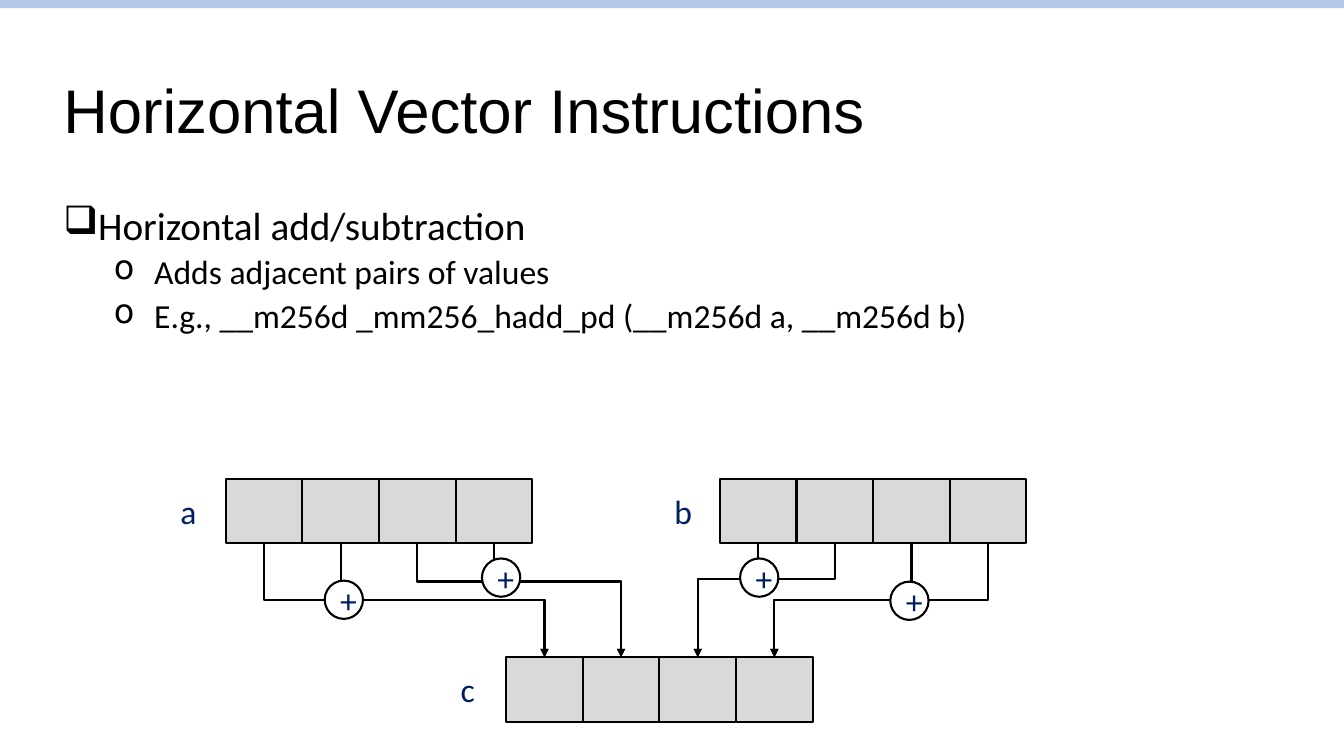
import lxml.etree
import pptx
import pptx.dml.color
import pptx.enum.shapes
import pptx.enum.text
import pptx.oxml.ns
import pptx.util

Inches = pptx.util.Inches
Pt = pptx.util.Pt
qn = pptx.oxml.ns.qn
SHAPES = pptx.enum.shapes.MSO_SHAPE
ANCHOR = pptx.enum.text.MSO_ANCHOR
ALIGN = pptx.enum.text.PP_ALIGN

BLACK, NAVY, WHITE = "000000", "002060", "FFFFFF"
GRAY, PALE_BLUE = "D9D9D9", "B4C7E7"
CELL_WIDTH, CELL_HEIGHT, CELL_COUNT = 0.76, 0.64, 4
INPUT_TOP, RESULT_TOP = 4.75, 6.52
CIRCLE_SIZE = 0.38
VECTOR_LEFT = {"a": 2.24, "b": 7.14, "c": 5.02}

BULLETS = [
    ("Horizontal add/subtraction", 0),
    ("Adds adjacent pairs of values", 1),
    ("E.g., __m256d _mm256_hadd_pd (__m256d a, __m256d b)", 1),
]
# Bullet character, left margin, indent, font size, space before
BULLET_LEVELS = [("❑", 0.25, -0.5, 28, 10), ("o", 0.9, -0.4, 24, 5)]

# Input vector, its two cells, result cell, height of the bend, centre of the plus
SUMS = [
    ("a", (0, 1), 0, 5.95, (3.41, 5.95)),
    ("a", (2, 3), 1, 5.77, (4.97, 5.73)),
    ("b", (0, 1), 2, 5.74, (7.53, 5.73)),
    ("b", (2, 3), 3, 5.95, (9.02, 5.96)),
]


def color(hex_value):
    return pptx.dml.color.RGBColor.from_string(hex_value)


def format_runs(paragraph, size, hex_value, font_name="Calibri"):
    for run in paragraph.runs:
        run.font.size = Pt(size)
        run.font.name = font_name
        run.font.color.rgb = color(hex_value)


def add_filled_shape(slide, kind, left, top, width, height, fill, outline=BLACK):
    shape = slide.shapes.add_shape(
        kind, Inches(left), Inches(top), Inches(width), Inches(height))
    shape.shadow.inherit = False
    shape.fill.solid()
    shape.fill.fore_color.rgb = color(fill)
    if outline:
        shape.line.color.rgb = color(outline)
        shape.line.width = Pt(1.5)
    else:
        shape.line.fill.background()
    return shape


def add_text_frame(slide, left, top, width, height, wrap=True):
    box = slide.shapes.add_textbox(
        Inches(left), Inches(top), Inches(width), Inches(height))
    box.text_frame.word_wrap = wrap
    return box.text_frame


def add_title(slide, text):
    frame = add_text_frame(slide, 0.53, 0.4, 12.27, 1.45)
    frame.vertical_anchor = ANCHOR.MIDDLE
    paragraph = frame.paragraphs[0]
    paragraph.text = text
    paragraph.line_spacing = 0.9
    format_runs(paragraph, 44, BLACK, "Arial")


def add_bullets(slide):
    frame = add_text_frame(slide, 0.53, 2, 11.89, 2.45)
    frame.text = "\n".join(text for text, level in BULLETS)
    for paragraph, (text, level) in zip(frame.paragraphs, BULLETS):
        character, margin, indent, size, space_before = BULLET_LEVELS[level]
        paragraph.level = level
        paragraph.line_spacing = 0.9
        paragraph.space_before = Pt(space_before)
        format_runs(paragraph, size, BLACK)
        properties = paragraph._p.get_or_add_pPr()
        properties.set("marL", str(Inches(margin)))
        properties.set("indent", str(Inches(indent)))
        lxml.etree.SubElement(properties, qn("a:buChar"), char=character)


def add_vector(slide, name, top):
    left = VECTOR_LEFT[name]
    for index in range(CELL_COUNT):
        add_filled_shape(slide, SHAPES.RECTANGLE, left + index * CELL_WIDTH, top,
                         CELL_WIDTH, CELL_HEIGHT, GRAY)
    frame = add_text_frame(slide, left - 0.55, top + 0.07, 0.36, 0.5, wrap=False)
    frame.text = name
    format_runs(frame.paragraphs[0], 24, NAVY)


def cell_center(name, index):
    return VECTOR_LEFT[name] + (index + 0.5) * CELL_WIDTH


def add_bent_arrow(slide, start_x, start_y, end_x, end_y, bend_y):
    """Draw an arrow that leaves downwards, crosses at bend_y and ends downwards."""
    drop, run = end_y - start_y, abs(end_x - start_x)
    left = (start_x + end_x - drop) / 2
    top = (start_y + end_y - run) / 2
    connector = slide.shapes.add_connector(
        pptx.enum.shapes.MSO_CONNECTOR.ELBOW, Inches(left), Inches(top),
        Inches(left + drop), Inches(top + run))
    connector.line.color.rgb = color(BLACK)
    connector.line.width = Pt(1.5)

    properties = connector._element.spPr
    transform = properties.find(qn("a:xfrm"))
    if end_x > start_x:
        transform.set("rot", str(270 * 60000))
        transform.set("flipH", "1")
    else:
        transform.set("rot", str(90 * 60000))
    geometry = properties.find(qn("a:prstGeom"))
    guides = geometry.find(qn("a:avLst"))
    if guides is None:
        guides = lxml.etree.SubElement(geometry, qn("a:avLst"))
    bend = round((bend_y - start_y) / drop * 100000)
    lxml.etree.SubElement(guides, qn("a:gd"), name="adj1", fmla=f"val {bend}")
    line = properties.find(qn("a:ln"))
    lxml.etree.SubElement(line, qn("a:tailEnd"), type="triangle")
    lxml.etree.SubElement(properties, qn("a:effectLst"))


def add_plus(slide, center_x, center_y):
    circle = add_filled_shape(
        slide, SHAPES.OVAL, center_x - CIRCLE_SIZE / 2, center_y - CIRCLE_SIZE / 2,
        CIRCLE_SIZE, CIRCLE_SIZE, WHITE)
    frame = circle.text_frame
    frame.text = "+"
    frame.vertical_anchor = ANCHOR.MIDDLE
    frame.paragraphs[0].alignment = ALIGN.CENTER
    format_runs(frame.paragraphs[0], 24, NAVY)


def main():
    presentation = pptx.Presentation()
    presentation.slide_width = Inches(13.33)
    presentation.slide_height = Inches(7.5)
    slide = presentation.slides.add_slide(presentation.slide_layouts[6])

    add_filled_shape(slide, SHAPES.RECTANGLE, 0, 0, 13.33, 0.08, PALE_BLUE, None)
    add_title(slide, "Horizontal Vector Instructions")
    add_bullets(slide)

    for name, top in (("a", INPUT_TOP), ("b", INPUT_TOP), ("c", RESULT_TOP)):
        add_vector(slide, name, top)
    for name, cells, result, bend_y, center in SUMS:
        for cell in cells:
            add_bent_arrow(slide, cell_center(name, cell), INPUT_TOP + CELL_HEIGHT,
                           cell_center("c", result), RESULT_TOP, bend_y)
        add_plus(slide, *center)

    presentation.save("out.pptx")


if __name__ == "__main__":
    main()
